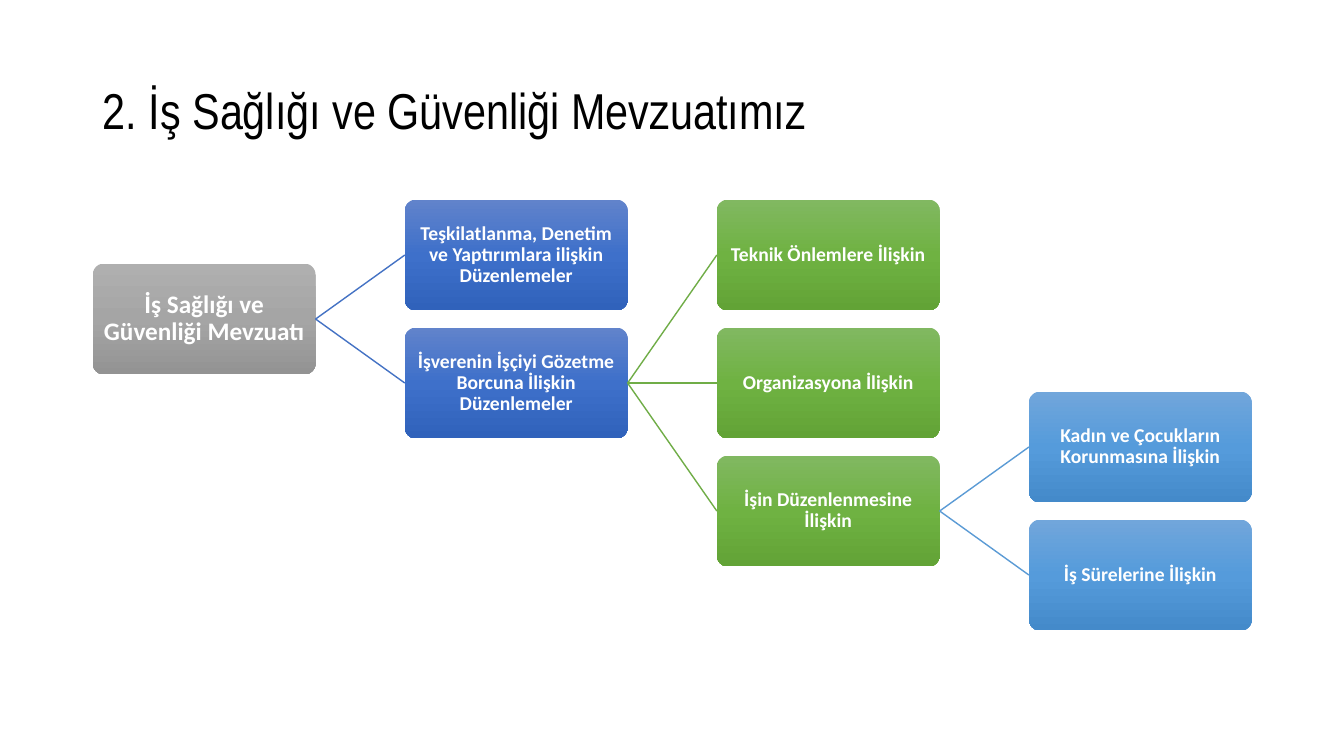
from copy import deepcopy
from dataclasses import dataclass

from lxml.etree import SubElement
from pptx import Presentation
from pptx.dml.color import RGBColor
from pptx.enum.shapes import MSO_CONNECTOR, MSO_SHAPE
from pptx.enum.text import MSO_ANCHOR, MSO_AUTO_SIZE, PP_ALIGN
from pptx.oxml.ns import qn
from pptx.util import Inches, Pt


@dataclass(frozen=True)
class Theme:
    head: str = "Arial Narrow"
    body: str = "Calibri"
    big: int = 36
    mid: int = 18
    small: int = 14
    dark: str = "000000"
    light: str = "FFFFFF"
    fills: tuple = (
        ("AFAFAF", "A5A5A5", "939393"),
        ("6183CB", "3E70CA", "3062BB"),
        ("81B861", "6FB242", "62A336"),
        ("71A6DB", "559BDB", "448ACA"),
    )
    lines: tuple = ("A5A5A5", "4472C4", "70AD47", "5B9BD5")


@dataclass(frozen=True)
class Grid:
    left: float = 0.92
    top: float = 1.98
    wide: float = 2.21
    high: float = 1.1
    col: float = 3.095
    row: float = 1.27

    def place(self, col, row):
        spot = (self.left + col * self.col, self.top + row * self.row,
                self.wide, self.high)
        return [Inches(side) for side in spot]


THEME = Theme()
GRID = Grid()

TREE = ("İş Sağlığı ve Güvenliği Mevzuatı", 0.5, (
    ("Teşkilatlanma, Denetim ve Yaptırımlara ilişkin Düzenlemeler", 0, ()),
    ("İşverenin İşçiyi Gözetme Borcuna İlişkin Düzenlemeler", 1, (
        ("Teknik Önlemlere İlişkin", 0, ()),
        ("Organizasyona İlişkin", 1, ()),
        ("İşin Düzenlenmesine İlişkin", 2, (
            ("Kadın ve Çocukların Korunmasına İlişkin", 1.5, ()),
            ("İş Sürelerine İlişkin", 2.5, ()),
        )),
    )),
))


def write(shape, text, font, size, color, bold=False,
          align=PP_ALIGN.LEFT, inset=None):
    frame = shape.text_frame
    frame.word_wrap = True
    frame.auto_size = MSO_AUTO_SIZE.NONE
    frame.vertical_anchor = MSO_ANCHOR.MIDDLE
    if inset is not None:
        frame.margin_left = frame.margin_right = Inches(inset)
        frame.margin_top = frame.margin_bottom = Inches(inset)
    para = frame.paragraphs[0]
    para.alignment = align
    para.line_spacing = 0.9
    run = para.add_run()
    run.text = text
    run.font.name = font
    run.font.size = Pt(size)
    run.font.bold = bold
    run.font.color.rgb = RGBColor.from_string(color)


def shade(shape, tones):
    shape.fill.gradient()
    shape.fill.gradient_angle = 270
    stops = shape.fill.gradient_stops
    parts = shape._element.spPr.find(qn("a:gradFill")).find(qn("a:gsLst"))
    for _ in range(len(tones) - len(stops)):
        parts.append(deepcopy(parts[0]))
    for step, (stop, tone) in enumerate(zip(shape.fill.gradient_stops, tones)):
        stop.position = step / (len(tones) - 1)
        stop.color.rgb = RGBColor.from_string(tone)


def add_box(slide, text, col, row):
    box = slide.shapes.add_shape(MSO_SHAPE.ROUNDED_RECTANGLE,
                                 *GRID.place(col, row))
    box.adjustments[0] = 0.1
    box.shadow.inherit = False
    box.line.fill.background()
    shade(box, THEME.fills[col])
    write(box, text, font=THEME.body, color=THEME.light, bold=True,
          size=THEME.small if col else THEME.mid,
          align=PP_ALIGN.CENTER, inset=0.04)
    return box


def join(slide, start, end, color):
    link = slide.shapes.add_connector(MSO_CONNECTOR.STRAIGHT, 0, 0, 0, 0)
    link.begin_connect(start, 3)
    link.end_connect(end, 1)
    link.line.width = Pt(1)
    link.line.color.rgb = RGBColor.from_string(color)
    SubElement(link._element.spPr, qn("a:effectLst"))


def add_tree(slide, node, col=0):
    text, row, kids = node
    box = add_box(slide, text, col, row)
    for kid in kids:
        join(slide, box, add_tree(slide, kid, col + 1), THEME.lines[col + 1])
    return box


def add_title(slide, text):
    title = slide.shapes.title
    title.left, title.top = Inches(GRID.left), Inches(0.4)
    title.width, title.height = Inches(11.5), Inches(1.45)
    write(title, text, font=THEME.head, size=THEME.big, color=THEME.dark)


def main():
    deck = Presentation()
    deck.slide_width, deck.slide_height = Inches(13.33), Inches(7.5)
    slide = deck.slides.add_slide(deck.slide_layouts.get_by_name("Title Only"))
    add_title(slide, "2. İş Sağlığı ve Güvenliği Mevzuatımız")
    add_tree(slide, TREE)
    deck.save("out.pptx")


if __name__ == "__main__":
    main()
